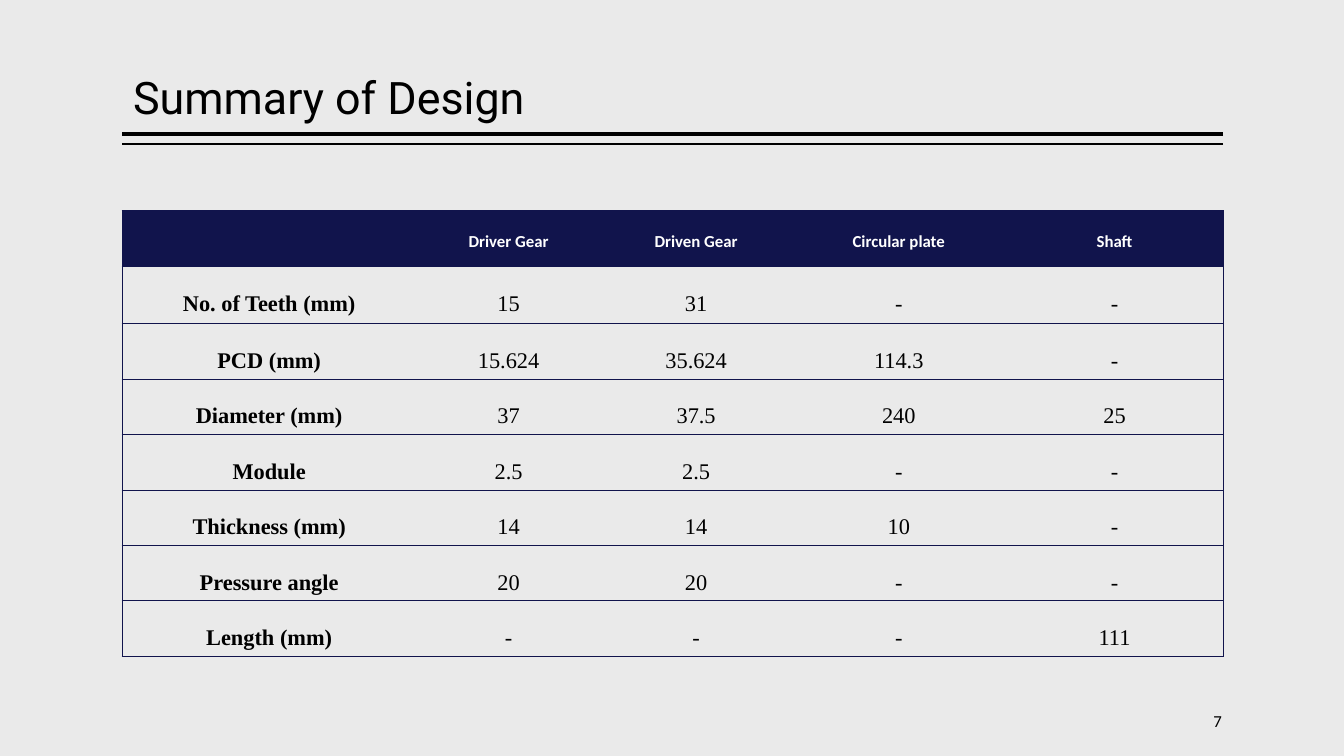
"""Builds the design summary slide: a ruled title above a table of gear dimensions."""
from lxml import etree
from pptx import Presentation
from pptx import util as u
from pptx.dml.color import RGBColor
from pptx.enum import shapes, text
from pptx.oxml.ns import qn

W, H = 13.33, 7.5
LEFT, WIDTH = 1.21, 10.92
RIGHT = LEFT + WIDTH
COLORS = {"bg": "EAEAEA", "ink": "000000", "navy": "11144C", "white": "FFFFFF"}
PLAIN_STYLE = "{2D5ABB26-0587-4C30-8999-92F81FD0307C}"
COLS = [2.92, 1.83, 1.89, 2.13, 2.15]
ROWS = [0.55, 0.57] + [0.55] * 6
DATA = [
    ["", "Driver Gear", "Driven Gear", "Circular plate", "Shaft"],
    ["No. of Teeth (mm)", "15", "31", "-", "-"],
    ["PCD (mm)", "15.624", "35.624", "114.3", "-"],
    ["Diameter (mm)", "37", "37.5", "240", "25"],
    ["Module", "2.5", "2.5", "-", "-"],
    ["Thickness (mm)", "14", "14", "10", "-"],
    ["Pressure angle", "20", "20", "-", "-"],
    ["Length (mm)", "-", "-", "-", "111"],
]
HEAD = {"name": "Calibri", "size": u.Pt(12), "bold": True}
BODY = {"name": "Times New Roman", "size": u.Pt(16), "bold": False}
LABEL = {**BODY, "bold": True}


def set_all(obj, values):
    """Set every attribute named in a dict of values."""
    for name, value in values.items():
        setattr(obj, name, value)


def rgb(name):
    """Return a palette colour."""
    return RGBColor.from_string(COLORS[name])


def write(tf, content, font, color="ink", **para):
    """Write one formatted paragraph into a text frame."""
    p = tf.paragraphs[0]
    set_all(p, para)
    r = p.add_run()
    r.text = content
    set_all(r.font, font)
    r.font.color.rgb = rgb(color)


def add_text(s, box, content, font, anchor, inset=0, **para):
    """Add a wrapped text box with one paragraph."""
    tf = s.shapes.add_textbox(*map(u.Inches, box)).text_frame
    set_all(tf, {"word_wrap": True, "vertical_anchor": anchor,
                 "margin_left": u.Inches(inset), "margin_right": 0})
    write(tf, content, font, **para)


def add_rule(s, y, width):
    """Add a horizontal rule across the content width."""
    ends = map(u.Inches, (RIGHT, y, LEFT, y))
    cx = s.shapes.add_connector(shapes.MSO_CONNECTOR.STRAIGHT, *ends)
    cx.line.width = u.Pt(width)
    cx.line.color.rgb = rgb("ink")
    etree.SubElement(cx._element.spPr, qn("a:effectLst"))


def add_border(cell, side):
    """Draw a thin navy border on one side (L, R, T or B) of a cell."""
    tc_pr = cell._tc.get_or_add_tcPr()
    ln = etree.SubElement(tc_pr, qn(f"a:ln{side}"), w=str(u.Pt(0.5)))
    fill = etree.SubElement(ln, qn("a:solidFill"))
    etree.SubElement(fill, qn("a:srgbClr"), val=COLORS["navy"])


def fill_cell(cell, content, row, col):
    """Style one table cell by its place and write its content."""
    set_all(cell, {"margin_left": u.Inches(0.07), "margin_right": u.Inches(0.07),
                   "margin_top": 0, "margin_bottom": 0})
    sides = "L" * (col == 0) + "R" * (col == len(COLS) - 1) + "TB"
    for side in sides:
        add_border(cell, side)
    if row == 0:
        cell.fill.solid()
        cell.fill.fore_color.rgb = rgb("navy")
    else:
        cell.fill.background()
    if content:
        font = HEAD if row == 0 else LABEL if col == 0 else BODY
        write(cell.text_frame, content, font, "ink" if row else "white",
              alignment=text.PP_ALIGN.CENTER, line_spacing=2.0)


def add_summary_table(s, top):
    """Add the table of dimensions."""
    box = map(u.Inches, (LEFT, top, WIDTH, sum(ROWS)))
    frame = s.shapes.add_table(len(ROWS), len(COLS), *box)
    table = frame.table
    table._tbl.tblPr.find(qn("a:tableStyleId")).text = PLAIN_STYLE
    for column, width in zip(table.columns, COLS):
        column.width = u.Inches(width)
    for row, height in zip(table.rows, ROWS):
        row.height = u.Inches(height)
    for i, values in enumerate(DATA):
        for j, value in enumerate(values):
            fill_cell(table.cell(i, j), value, i, j)


def main():
    """Build and save the slide."""
    prs = Presentation()
    set_all(prs, {"slide_width": u.Inches(W), "slide_height": u.Inches(H)})
    s = prs.slides.add_slide(prs.slide_layouts[6])
    s.background.fill.solid()
    s.background.fill.fore_color.rgb = rgb("bg")
    for y, width in ((1.33, 3), (1.43, 1)):
        add_rule(s, y, width)
    add_text(s, (LEFT, 0.08, WIDTH, 1.2), "Summary of Design",
             {"name": "Roboto", "size": u.Pt(32)}, text.MSO_ANCHOR.BOTTOM,
             inset=0.11, line_spacing=0.9)
    add_summary_table(s, 2.09)
    add_text(s, (RIGHT - 2.01, 6.95, 2, 0.4), "7",
             {"name": "Calibri", "size": u.Pt(12)}, text.MSO_ANCHOR.MIDDLE,
             alignment=text.PP_ALIGN.RIGHT)
    prs.save("out.pptx")


if __name__ == "__main__":
    main()
